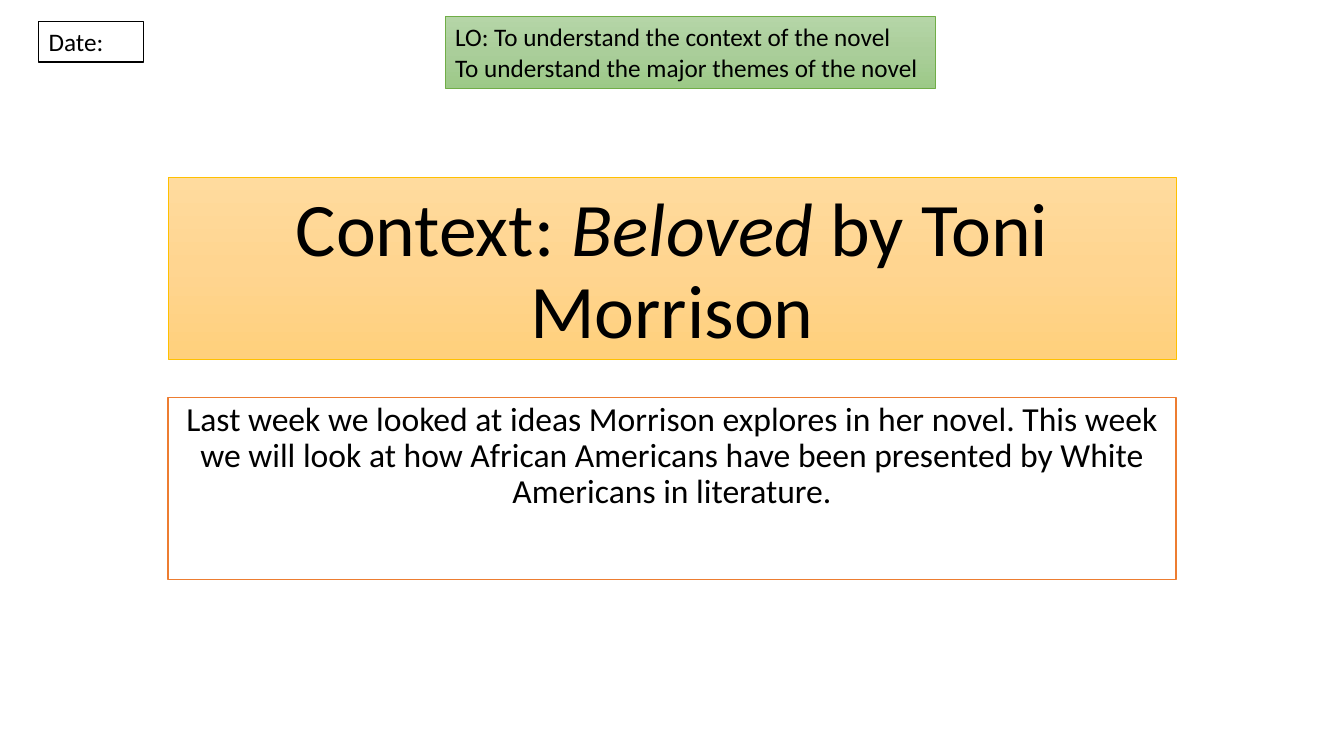
from copy import deepcopy

from pptx import Presentation
from pptx.dml.color import RGBColor
from pptx.enum.shapes import MSO_SHAPE
from pptx.enum.text import MSO_ANCHOR, PP_ALIGN
from pptx.util import Inches, Pt

BLACK = RGBColor(0x00, 0x00, 0x00)
WHITE = RGBColor(0xFF, 0xFF, 0xFF)
ORANGE = RGBColor(0xED, 0x7D, 0x31)
GOLD = RGBColor(0xFF, 0xC0, 0x00)
GREEN = RGBColor(0x70, 0xAD, 0x47)
GOLD_FADE = [RGBColor(0xFF, 0xDB, 0x9E), RGBColor(0xFF, 0xD5, 0x90), RGBColor(0xFF, 0xD0, 0x7C)]
GREEN_FADE = [RGBColor(0xB5, 0xD5, 0xA7), RGBColor(0xAA, 0xCE, 0x9A), RGBColor(0x9C, 0xC9, 0x87)]


class LessonSlide:
    """Places boxes on a grid of 16 columns by 9 rows."""

    COLUMNS, ROWS = 16, 9
    FONT = "Calibri"

    def __init__(self, prs):
        self.s = prs.slides.add_slide(prs.slide_layouts[6])
        self.col = prs.slide_width / self.COLUMNS
        self.row = prs.slide_height / self.ROWS

    def box(self, col, row, cols, rows, line, width):
        sp = self.s.shapes.add_shape(
            MSO_SHAPE.RECTANGLE, int(col * self.col), int(row * self.row),
            int(cols * self.col), int(rows * self.row))
        sp.shadow.inherit = False
        sp.fill.solid()
        sp.fill.fore_color.rgb = WHITE
        sp.line.color.rgb = line
        sp.line.width = Pt(width)
        return sp

    def fade(self, sp, colours):
        """Fill from top to bottom with three evenly spaced colours."""
        sp.fill.gradient()
        sp.fill.gradient_angle = 270
        stops = sp._element.spPr.gradFill.gsLst
        stops.append(deepcopy(stops[-1]))
        for i, (stop, colour) in enumerate(zip(sp.fill.gradient_stops, colours)):
            stop.color.rgb = colour
            stop.position = i / 2

    def text(self, sp, paragraphs, size, align=PP_ALIGN.LEFT, anchor=MSO_ANCHOR.TOP, spacing=1.0):
        """Write paragraphs, each a list of (text, italic) runs."""
        tf = sp.text_frame
        tf.word_wrap = True
        tf.vertical_anchor = anchor
        for i, runs in enumerate(paragraphs):
            p = tf.add_paragraph() if i else tf.paragraphs[0]
            p.alignment = align
            p.line_spacing = spacing
            p.font.name = self.FONT
            p.font.size = Pt(size)
            p.font.color.rgb = BLACK
            for words, italic in runs:
                r = p.add_run()
                r.text = words
                if italic:
                    r.font.italic = True


def main():
    prs = Presentation()
    prs.slide_width, prs.slide_height = Inches(13.33), Inches(7.5)
    lesson = LessonSlide(prs)

    # Title
    title = lesson.box(2, 2.11, 12, 2.17, GOLD, 0.5)
    lesson.fade(title, GOLD_FADE)
    lesson.text(title, [[("Context: ", False), ("Beloved", True), (" by Toni Morrison", False)]],
                54, PP_ALIGN.CENTER, MSO_ANCHOR.BOTTOM, 0.9)

    # Introduction
    intro = lesson.box(2, 4.73, 12, 2.17, ORANGE, 1)
    lesson.text(intro, [[("Last week we looked at ideas Morrison explores in her novel. "
                          "This week we will look at how African Americans have been "
                          "presented by White Americans in literature.", False)]],
                24, PP_ALIGN.CENTER, spacing=0.9)

    # Date
    date = lesson.box(0.46, 0.26, 1.25, 0.48, BLACK, 1)
    lesson.text(date, [[("Date:", False)]], 18)

    # Learning objectives
    objectives = lesson.box(5.3, 0.2, 5.83, 0.85, GREEN, 0.5)
    lesson.fade(objectives, GREEN_FADE)
    lesson.text(objectives, [[("LO: To understand the context of the novel", False)],
                             [("To understand the major themes of the novel", False)]], 18)

    prs.save("out.pptx")


if __name__ == "__main__":
    main()
